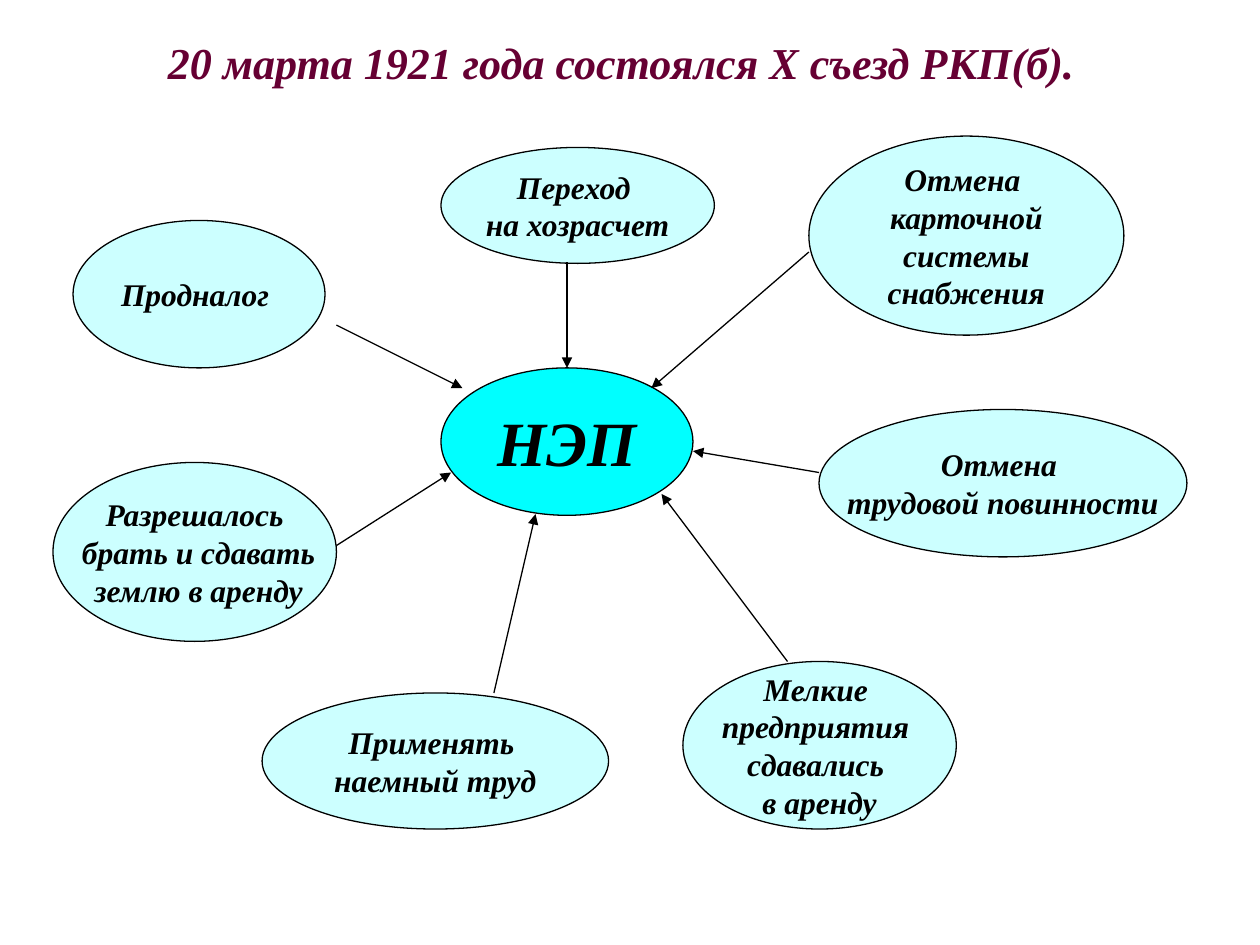
import pptx
import pptx.util
import pptx.dml.color
import pptx.enum.shapes
import pptx.enum.text
import pptx.oxml
import pptx.oxml.ns

Inches = pptx.util.Inches
Pt = pptx.util.Pt
RGBColor = pptx.dml.color.RGBColor

BLACK = RGBColor(0x00, 0x00, 0x00)
BURGUNDY = RGBColor(0x66, 0x00, 0x33)
CYAN = RGBColor(0x00, 0xFF, 0xFF)
PALE_CYAN = RGBColor(0xCC, 0xFF, 0xFF)


def format_text(frame, size, color):
    frame.vertical_anchor = pptx.enum.text.MSO_ANCHOR.MIDDLE
    for paragraph in frame.paragraphs:
        paragraph.alignment = pptx.enum.text.PP_ALIGN.CENTER
        for run in paragraph.runs:
            run.font.name = "Times New Roman"
            run.font.size = Pt(size)
            run.font.bold = True
            run.font.italic = True
            run.font.color.rgb = color


def add_oval(slide, text, box, fill, size):
    oval = slide.shapes.add_shape(
        pptx.enum.shapes.MSO_SHAPE.OVAL, *[Inches(value) for value in box])
    oval.shadow.inherit = False
    oval.fill.solid()
    oval.fill.fore_color.rgb = fill
    oval.line.color.rgb = BLACK
    oval.line.width = Pt(0.75)
    oval.text_frame.text = text
    oval.text_frame.word_wrap = False
    format_text(oval.text_frame, size, BLACK)
    return oval


presentation = pptx.Presentation()
presentation.slide_width = Inches(10)
presentation.slide_height = Inches(7.5)
slide = presentation.slides.add_slide(presentation.slide_layouts[5])

heading = slide.shapes.title
heading.left, heading.top = Inches(0.42), Inches(0.33)
heading.width, heading.height = Inches(9.02), Inches(0.33)
heading.text_frame.text = "20 марта 1921 года состоялся Х съезд РКП(б)."
heading.text_frame.auto_size = pptx.enum.text.MSO_AUTO_SIZE.NONE
format_text(heading.text_frame, 25.2, BURGUNDY)

nep = add_oval(slide, "НЭП", (3.5, 2.92, 2, 1.17), CYAN, 36)

measures = [
    ("Мелкие \nпредприятия \nсдавались \nв аренду", (5.42, 5.25, 2.17, 1.33)),
    ("Разрешалось\n брать и сдавать\n землю в аренду", (0.42, 3.67, 2.25, 1.42)),
    ("Применять \nнаемный труд", (2.08, 5.5, 2.75, 1.08)),
    ("Отмена \nкарточной\n системы \nснабжения", (6.42, 1.08, 2.5, 1.58)),
    ("Отмена \nтрудовой повинности", (6.5, 3.25, 2.92, 1.17)),
    ("Продналог ", (0.58, 1.75, 2, 1.17)),
    ("Переход \nна хозрасчет", (3.5, 1.17, 2.17, 0.92)),
]
for text, box in measures:
    add_oval(slide, text, box, PALE_CYAN, 18)

arrow_ends = [
    (4.5, 2.08, 4.5, 2.92),
    (2.67, 2.58, 3.67, 3.08),
    (2.67, 4.33, 3.58, 3.75),
    (3.92, 5.5, 4.25, 4.08),
    (6.25, 5.25, 5.25, 3.92),
    (6.5, 3.75, 5.5, 3.58),
    (6.42, 2, 5.17, 3.08),
]
arrows = []
for ends in arrow_ends:
    arrow = slide.shapes.add_connector(
        pptx.enum.shapes.MSO_CONNECTOR.STRAIGHT, *[Inches(value) for value in ends])
    arrow.line.color.rgb = BLACK
    arrow.line.width = Pt(0.75)
    head = pptx.oxml.parse_xml(
        f'<a:tailEnd {pptx.oxml.ns.nsdecls("a")} type="triangle"/>')
    arrow.line._get_or_add_ln().append(head)
    arrow._element.spPr.append(
        pptx.oxml.parse_xml(f'<a:effectLst {pptx.oxml.ns.nsdecls("a")}/>'))
    arrows.append(arrow)
arrows[0].end_connect(nep, 0)

presentation.save("out.pptx")
